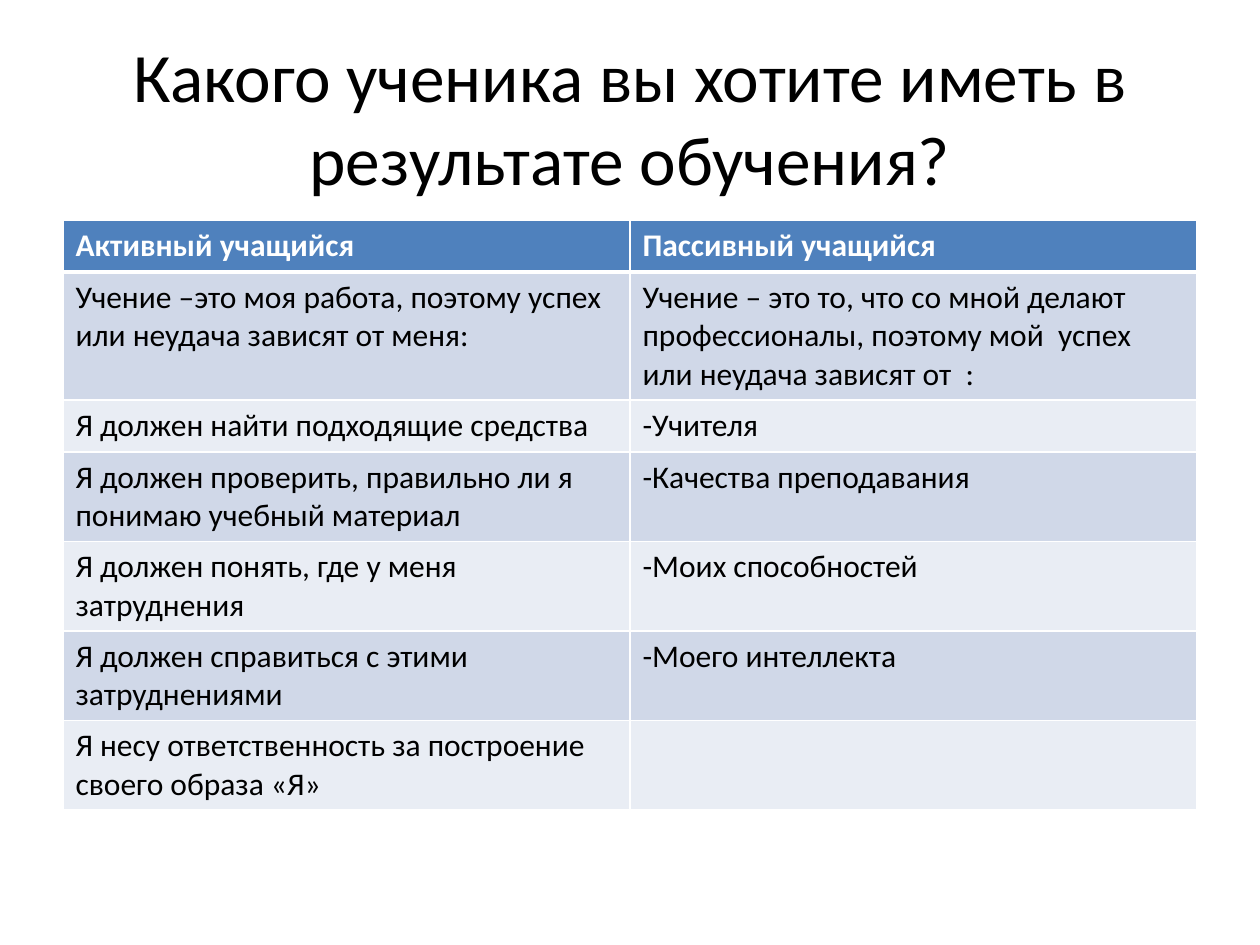
from dataclasses import dataclass

from lxml import etree
from pptx import Presentation
from pptx.dml.color import RGBColor
from pptx.enum.text import MSO_ANCHOR, PP_ALIGN
from pptx.oxml.ns import qn
from pptx.util import Inches, Pt

MIDDLE = MSO_ANCHOR.MIDDLE
CENTER = PP_ALIGN.CENTER
FONT = "Calibri"
BLACK, WHITE = "000000", "FFFFFF"
BLUE, BANDS = "4F81BD", ("D0D8E8", "E9EDF4")
TITLE = "Какого ученика вы хотите иметь в результате обучения?"


@dataclass
class Pair:
    active: str
    passive: str


HEAD = Pair("Активный учащийся", "Пассивный учащийся")
PAIRS = [
    Pair("Учение –это моя работа, поэтому успех или неудача зависят от меня:",
         "Учение – это то, что со мной делают профессионалы, "
         "поэтому мой  успех или неудача зависят от  :"),
    Pair("Я должен найти подходящие средства", "-Учителя"),
    Pair("Я должен проверить, правильно ли я понимаю учебный материал",
         "-Качества преподавания"),
    Pair("Я должен понять, где у меня затруднения", "-Моих способностей"),
    Pair("Я должен справиться с этими затруднениями", "-Моего интеллекта"),
    Pair("Я несу ответственность за построение своего образа «Я»", ""),
]


def paint(target, color: str) -> None:
    """Set a fill or font colour from a hex string."""
    if hasattr(target, "solid"):
        target.solid()
        target = target.fore_color
    else:
        target = target.color
    target.rgb = RGBColor.from_string(color)


def add_run(para, text: str, size: float, color: str, bold: bool = False) -> None:
    run = para.add_run()
    run.text = text
    run.font.name = FONT
    run.font.size = Pt(size)
    run.font.bold = bold
    paint(run.font, color)


def add_edges(cell, top: float, bottom: float) -> None:
    """Add white cell borders; this must come before the cell's fill."""
    props = cell._tc.get_or_add_tcPr()
    for side, width in (("L", 1), ("R", 1), ("T", top), ("B", bottom)):
        line = etree.SubElement(props, qn(f"a:ln{side}"), w=str(Pt(width)))
        fill = etree.SubElement(line, qn("a:solidFill"))
        etree.SubElement(fill, qn("a:srgbClr"), val=WHITE)


def add_title(slide) -> None:
    title = slide.shapes.title
    title.left, title.top = Inches(0.5), Inches(0.3)
    title.width, title.height = Inches(9), Inches(1.25)
    frame = title.text_frame
    frame.word_wrap = True
    frame.vertical_anchor = MIDDLE
    para = frame.paragraphs[0]
    para.alignment = CENTER
    add_run(para, TITLE, 39.6, BLACK)


def add_grid(slide, pairs: list[Pair]) -> None:
    """Draw the table, with the first pair as its header."""
    high = Inches(0.41)
    table = slide.shapes.add_table(
        len(pairs), 2, Inches(0.5), Inches(1.75), Inches(9), high * len(pairs)
    ).table
    for row, pair in enumerate(pairs):
        table.rows[row].height = high
        head = row == 0
        for col, text in enumerate((pair.active, pair.passive)):
            cell = table.cell(row, col)
            add_edges(cell, top=3 if row == 1 else 1, bottom=3 if head else 1)
            paint(cell.fill, BLUE if head else BANDS[(row - 1) % 2])
            if text:
                para = cell.text_frame.paragraphs[0]
                add_run(para, text, 18, WHITE if head else BLACK, head)


def main() -> None:
    deck = Presentation()
    deck.slide_width, deck.slide_height = Inches(10), Inches(7.5)
    slide = deck.slides.add_slide(deck.slide_layouts[5])
    paint(slide.background.fill, WHITE)
    add_title(slide)
    add_grid(slide, [HEAD, *PAIRS])
    deck.save("out.pptx")


if __name__ == "__main__":
    main()
